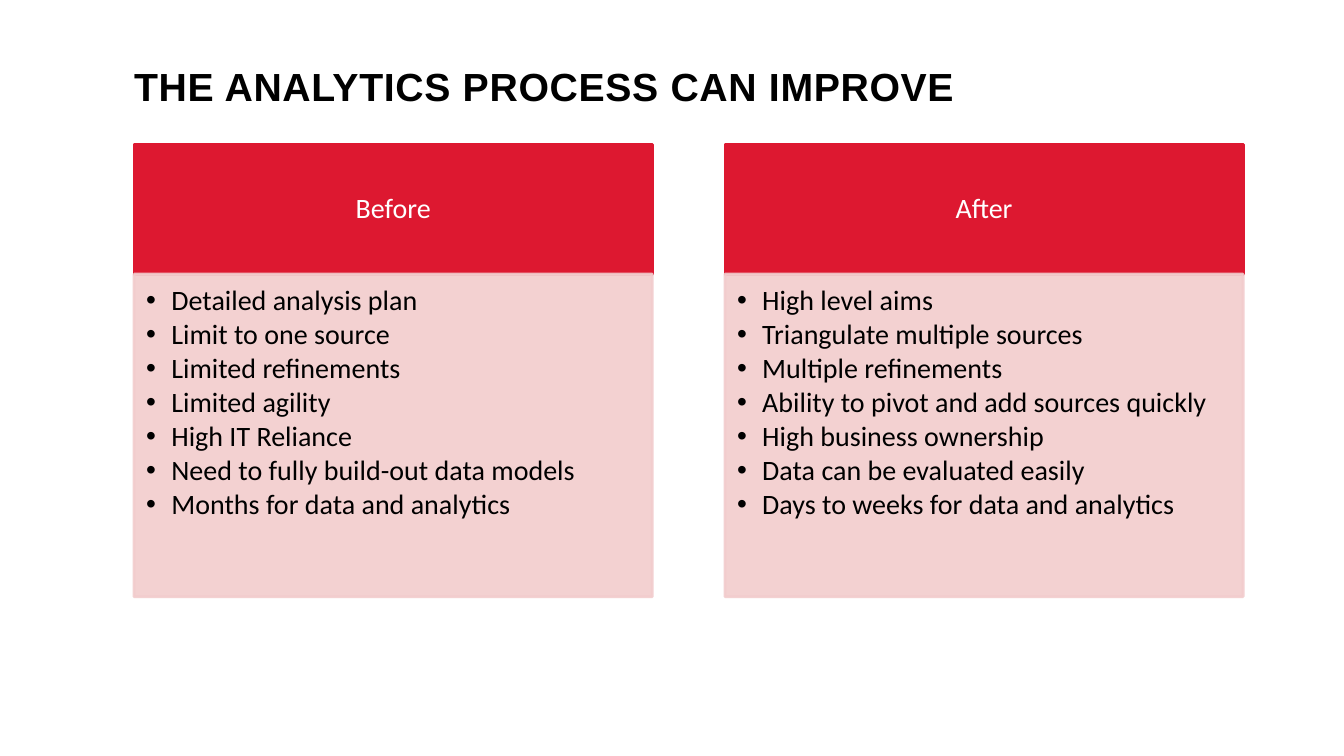
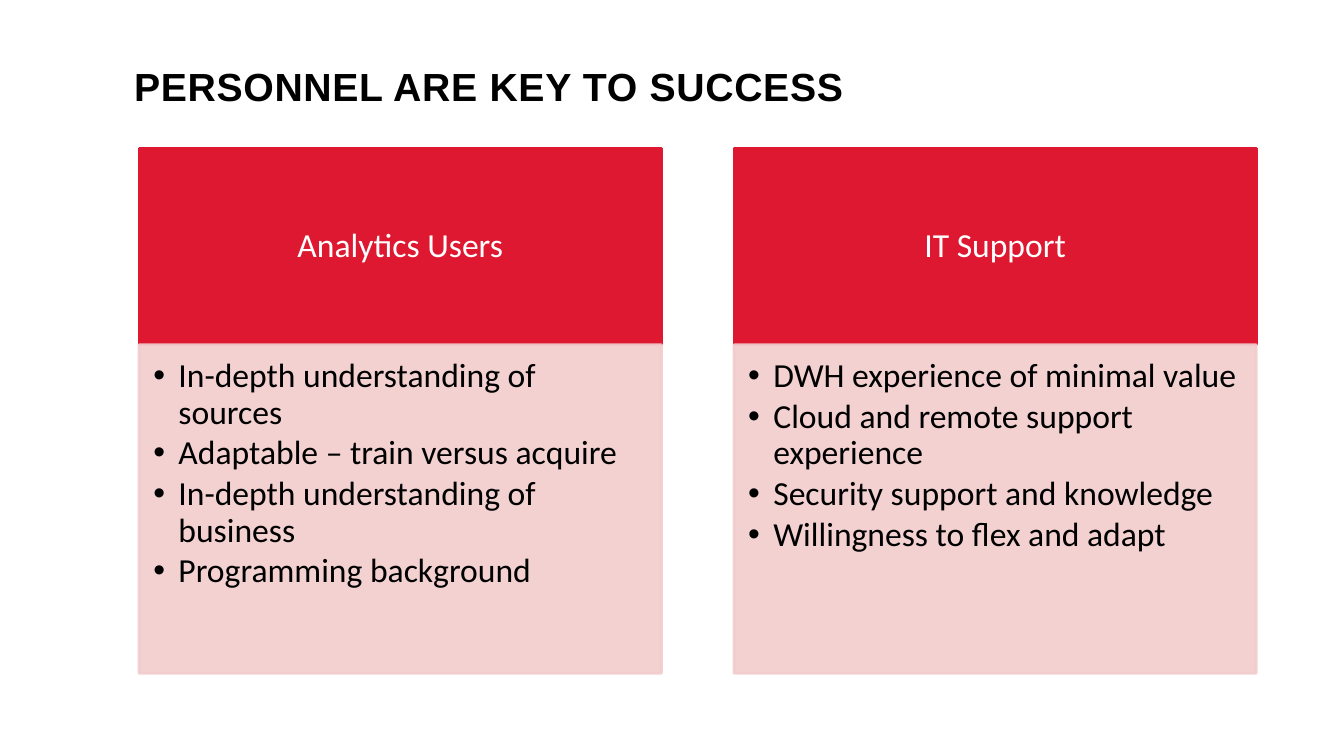
"""Build two comparison slides, each with two headed lists."""
from lxml.etree import SubElement
from pptx import Presentation
from pptx.dml.color import RGBColor
from pptx.enum.shapes import MSO_SHAPE
from pptx.enum.text import MSO_ANCHOR, PP_ALIGN
from pptx.oxml.ns import qn
from pptx.util import Inches, Pt

COLORS = {"head": "DD1830", "body": "F2CCCD", "dark": "000000", "light": "FFFFFF"}

SLIDES = [
    {
        "title": "THE ANALYTICS PROCESS CAN IMPROVE",
        "left": 1.33, "top": 1.43, "width": 5.14, "step": 5.86,
        "heights": (1.29, 3.2), "size": 20,
        "head_pad": (0.16, 0.09, 0.16, 0.09),
        "body_pad": (0.12, 0.12, 0.16, 0.17),
        "lists": [
            ("Before", [
                "Detailed analysis plan",
                "Limit to one source",
                "Limited refinements",
                "Limited agility",
                "High IT Reliance",
                "Need to fully build-out data models",
                "Months for data and analytics",
            ]),
            ("After", [
                "High level aims",
                "Triangulate multiple sources",
                "Multiple refinements",
                "Ability to pivot and add sources quickly",
                "High business ownership",
                "Data can be evaluated easily",
                "Days to weeks for data and analytics",
            ]),
        ],
    },
    {
        "title": "PERSONNEL ARE KEY TO SUCCESS",
        "left": 1.38, "top": 1.47, "width": 5.18, "step": 5.9,
        "heights": (1.95, 3.26), "size": 24,
        "head_pad": (0.19, 0.11, 0.19, 0.11),
        "body_pad": (0.14, 0.14, 0.19, 0.21),
        "lists": [
            ("Analytics Users", [
                "In-depth understanding of sources",
                "Adaptable – train versus acquire",
                "In-depth understanding of business",
                "Programming background",
            ]),
            ("IT Support", [
                "DWH experience of minimal value",
                "Cloud and remote support experience",
                "Security support and knowledge",
                "Willingness to flex and adapt",
            ]),
        ],
    },
]


def rgb(name):
    return RGBColor.from_string(COLORS[name])


def set_frame(frame, pad, anchor):
    frame.word_wrap = True
    frame.vertical_anchor = anchor
    frame.margin_left, frame.margin_top, frame.margin_right, frame.margin_bottom = map(Inches, pad)


def add_run(para, text, font, size, color):
    run = para.add_run()
    run.text = text
    run.font.name = font
    run.font.size = Pt(size)
    run.font.color.rgb = rgb(color)
    return run


def add_title(slide, text):
    box = slide.shapes.add_textbox(Inches(1.33), Inches(0.42), Inches(8.81), Inches(0.87))
    set_frame(box.text_frame, (0, 0, 0, 0), MSO_ANCHOR.MIDDLE)
    run = add_run(box.text_frame.paragraphs[0], text, "Arial", 28, "dark")
    run.font.bold = True
    run.font._element.set("spc", "50")


def add_panel(slide, area, color, pad, anchor):
    panel = slide.shapes.add_shape(MSO_SHAPE.RECTANGLE, *map(Inches, area))
    panel.shadow.inherit = False
    panel.fill.solid()
    panel.fill.fore_color.rgb = rgb(color)
    panel.line.color.rgb = rgb(color)
    panel.line.width = Pt(2)
    set_frame(panel.text_frame, pad, anchor)
    return panel


def fade(panel, percent):
    for tint in panel._element.spPr.iter(qn("a:srgbClr")):
        SubElement(tint, qn("a:alpha"), val=str(percent * 1000))


def add_bullet(para):
    props = para._p.get_or_add_pPr()
    props.set("marL", str(Inches(0.25)))
    props.set("indent", str(-Inches(0.25)))
    SubElement(props, qn("a:buFont"), typeface="Arial")
    SubElement(props, qn("a:buChar"), char="•")


def add_list(slide, data, left, head, items):
    top, width, size = data["top"], data["width"], data["size"]
    head_high, body_high = data["heights"]

    panel = add_panel(slide, (left, top, width, head_high), "head",
                      data["head_pad"], MSO_ANCHOR.MIDDLE)
    para = panel.text_frame.paragraphs[0]
    para.alignment = PP_ALIGN.CENTER
    para.line_spacing = 0.9
    add_run(para, head, "Calibri", size, "light")

    panel = add_panel(slide, (left, top + head_high, width, body_high), "body",
                      data["body_pad"], MSO_ANCHOR.TOP)
    fade(panel, 90)
    frame = panel.text_frame
    for index, item in enumerate(items):
        para = frame.add_paragraph() if index else frame.paragraphs[0]
        para.alignment = PP_ALIGN.LEFT
        para.line_spacing = 0.9
        para.space_after = Pt(size * 0.135)
        add_bullet(para)
        add_run(para, item, "Calibri", size, "dark")


def main():
    deck = Presentation()
    deck.slide_width, deck.slide_height = Inches(13.33), Inches(7.5)
    for data in SLIDES:
        slide = deck.slides.add_slide(deck.slide_layouts[6])
        for index, (head, items) in enumerate(data["lists"]):
            add_list(slide, data, data["left"] + index * data["step"], head, items)
        add_title(slide, data["title"])
    deck.save("out.pptx")


if __name__ == "__main__":
    main()
